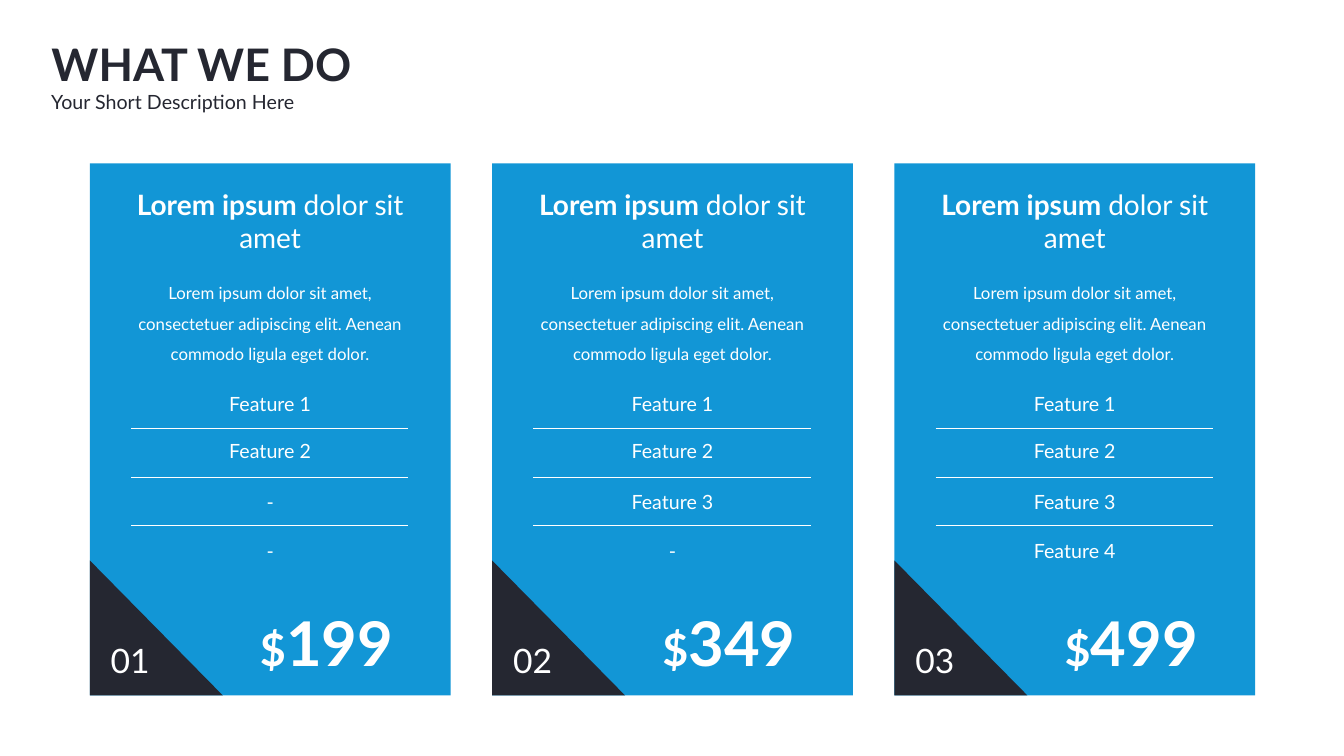
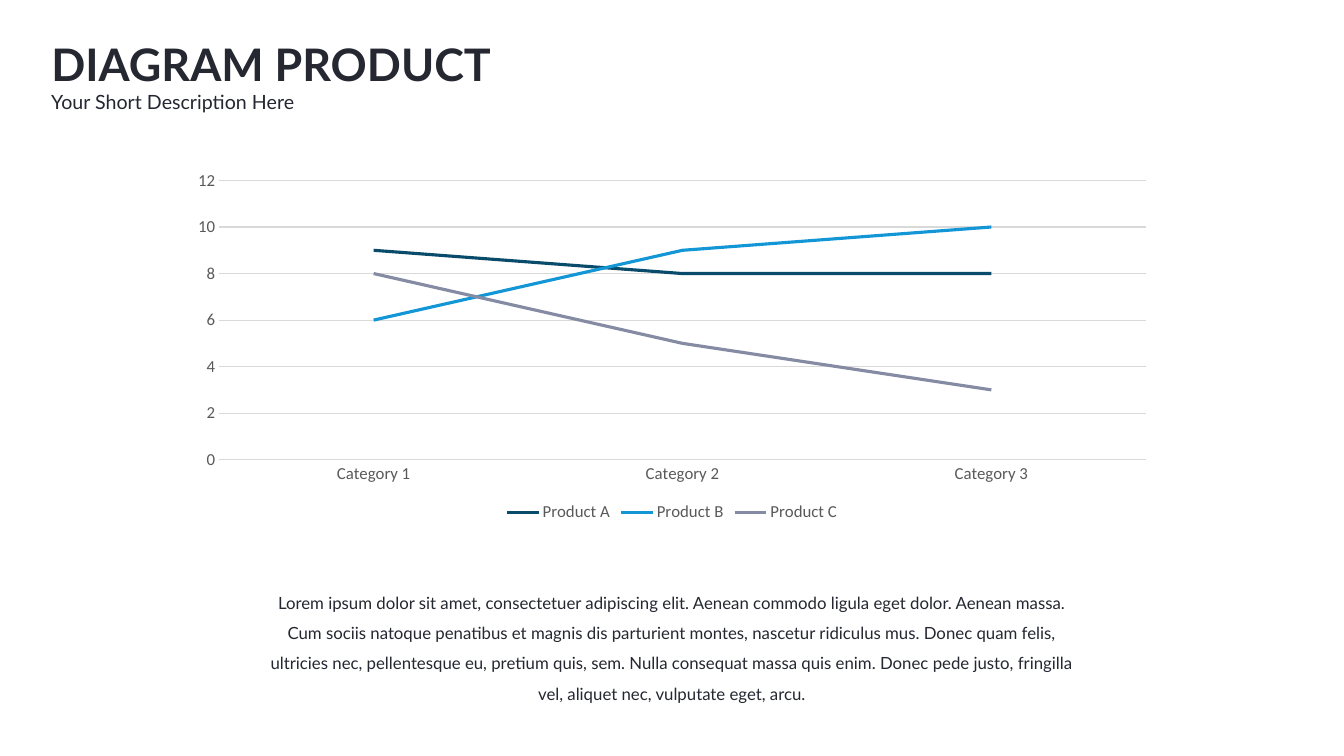
from lxml import etree
from pptx import Presentation
from pptx.chart.data import CategoryChartData
from pptx.dml.color import RGBColor
from pptx.enum.chart import XL_CHART_TYPE as ChartType, XL_LEGEND_POSITION as LegendPosition
from pptx.enum.chart import XL_MARKER_STYLE as Marker, XL_TICK_MARK as TickMark
from pptx.enum.shapes import MSO_CONNECTOR as Connector, MSO_SHAPE as Shape
from pptx.enum.text import MSO_ANCHOR as Anchor, MSO_AUTO_SIZE as AutoSize, PP_ALIGN as Align
from pptx.oxml.ns import qn
from pptx.util import Emu, Pt

COLORS = {
    "white": "FFFFFF", "ink": "252731", "blue": "1296D6", "navy": "094B6B",
    "slate": "868BA4", "grid": "D9D9D9", "label": "595959",
}
LOREM = "Lorem ipsum dolor sit amet, consectetuer adipiscing elit. Aenean commodo ligula eget dolor."
LOREM_LONG = LOREM + (
    " Aenean massa. Cum sociis natoque penatibus et magnis dis parturient montes,"
    " nascetur ridiculus mus. Donec quam felis, ultricies nec, pellentesque eu,"
    " pretium quis, sem. Nulla consequat massa quis enim. Donec pede justo,"
    " fringilla vel, aliquet nec, vulputate eget, arcu."
)
PLANS = [
    ("01", "199", ("Feature 1", "Feature 2", "-", "-")),
    ("02", "349", ("Feature 1", "Feature 2", "Feature 3", "-")),
    ("03", "499", ("Feature 1", "Feature 2", "Feature 3", "Feature 4")),
]
CARD_LEFT, CARD_PITCH = 89, 399
FEATURE_TOPS = (383, 430, 481, 529)
DIVIDER_TOP, DIVIDER_PITCH = 425, 48


def px(*lengths):
    """Turn lengths at 100 px to the inch into EMU."""
    return [Emu(length * 9144) for length in lengths]


def rgb(name):
    """Look up a named colour."""
    return RGBColor.from_string(COLORS[name])


class Deck:
    """Holds the presentation, its style and the current slide."""

    font = "Lato"

    def __init__(self):
        """Start a wide presentation."""
        self.presentation = Presentation()
        self.presentation.slide_width, self.presentation.slide_height = px(1333, 750)
        self.slide = None

    def set_font(self, font, size=None, color=None, bold=None, name=None):
        """Apply the deck's font settings."""
        font.name = name or self.font
        if size:
            font.size = Pt(size)
        if color:
            font.color.rgb = rgb(color)
        font.bold = bold

    def add_slide(self, title, subtitle):
        """Add a slide with the shared heading."""
        self.slide = self.presentation.slides.add_slide(self.presentation.slide_layouts[5])
        heading = self.slide.shapes.title
        heading.left, heading.top, heading.width, heading.height = px(41, 28, 626, 70)
        frame = heading.text_frame
        frame.text = title
        frame.auto_size = AutoSize.NONE
        frame.vertical_anchor = Anchor.MIDDLE
        paragraph = frame.paragraphs[0]
        paragraph.alignment = Align.LEFT
        self.set_font(paragraph.font, 32, "ink", True)
        self.text((41, 87, 626, 33), subtitle, 14, "ink", Align.LEFT, spacing=0.9)

    def text(self, box, content, size=None, color="white", align=Align.CENTER,
             spacing=None, anchor=Anchor.TOP):
        """Add text, given as a string or as (text, size, bold) runs."""
        frame = self.slide.shapes.add_textbox(*px(*box)).text_frame
        frame.word_wrap = True
        frame.auto_size = AutoSize.SHAPE_TO_FIT_TEXT
        frame.vertical_anchor = anchor
        paragraph = frame.paragraphs[0]
        paragraph.alignment = align
        if spacing:
            paragraph.line_spacing = spacing
        if isinstance(content, str):
            paragraph.add_run().text = content
        else:
            for words, run_size, bold in content:
                run = paragraph.add_run()
                run.text = words
                run.font.size = Pt(run_size)
                run.font.bold = bold
        self.set_font(paragraph.font, size, color)

    def shape(self, kind, box, color):
        """Add a plain filled shape."""
        shape = self.slide.shapes.add_shape(kind, *px(*box))
        shape.shadow.inherit = False
        shape.fill.solid()
        shape.fill.fore_color.rgb = rgb(color)
        shape.line.fill.background()

    def divider(self, left, top, width):
        """Add a thin white horizontal line."""
        line = self.slide.shapes.add_connector(
            Connector.STRAIGHT, *px(left, top, left + width, top))
        line.line.color.rgb = rgb("white")
        line.line.width = Pt(0.3)
        etree.SubElement(line._element.spPr, qn("a:effectLst"))

    def line_chart(self, box, categories, series):
        """Add a line chart from (name, values, colour) series."""
        data = CategoryChartData()
        data.categories = categories
        for name, values, _ in series:
            data.add_series(name, values)
        chart = self.slide.shapes.add_chart(ChartType.LINE, *px(*box), data).chart
        self.set_font(chart.font, 12, "label", False, "Calibri")
        chart.has_title = False
        chart.has_legend = True
        chart.legend.position = LegendPosition.BOTTOM
        chart.legend.include_in_layout = False
        for axis in (chart.category_axis, chart.value_axis):
            axis.major_tick_mark = axis.minor_tick_mark = TickMark.NONE
        chart.value_axis.format.line.fill.background()
        for line in (chart.category_axis.format.line, chart.value_axis.major_gridlines.format.line):
            line.color.rgb = rgb("grid")
            line.width = Pt(0.75)
        chart.plots[0].vary_by_categories = False
        for plotted, (_, _, color) in zip(chart.plots[0].series, series):
            plotted.smooth = False
            plotted.marker.style = Marker.NONE
            plotted.format.line.color.rgb = rgb(color)
            plotted.format.line.width = Pt(2.25)

    def price_card(self, left, number, price, features):
        """Add one pricing card."""
        self.shape(Shape.RECTANGLE, (left, 162, 358, 528), "blue")
        self.shape(Shape.RIGHT_TRIANGLE, (left, 556, 132, 134), "ink")
        self.text((left + 11, 630, 70, 50), number, 24, align=Align.LEFT)
        self.text((left + 122, 595, 226, 84), [("$", 32, True), (price, 44, True)])
        self.text((left + 24, 181, 310, 77),
                  [("Lorem ipsum ", 20, True), ("dolor sit amet", 20, False)])
        self.text((left + 24, 266, 310, 97), LOREM, 12, spacing=1.5)
        for top, feature in zip(FEATURE_TOPS, features):
            self.text((left + 66, top, 226, 34), feature, 14, anchor=Anchor.MIDDLE)
        for index in range(len(features) - 1):
            self.divider(left + 41, DIVIDER_TOP + index * DIVIDER_PITCH, 275)


def main():
    """Build and save both slides."""
    deck = Deck()
    deck.add_slide("WHAT WE DO", "Your Short Description Here")
    for index, plan in enumerate(PLANS):
        deck.price_card(CARD_LEFT + index * CARD_PITCH, *plan)

    deck.add_slide("DIAGRAM PRODUCT", "Your Short Description Here")
    deck.line_chart(
        (177, 162, 979, 360),
        ["Category 1", "Category 2", "Category 3"],
        [("Product A", (9, 8, 8), "navy"),
         ("Product B", (6, 9, 10), "blue"),
         ("Product C", (8, 5, 3), "slate")],
    )
    deck.text((256, 573, 821, 131), LOREM_LONG, 12, "ink", spacing=1.5)
    deck.presentation.save("out.pptx")


if __name__ == "__main__":
    main()
